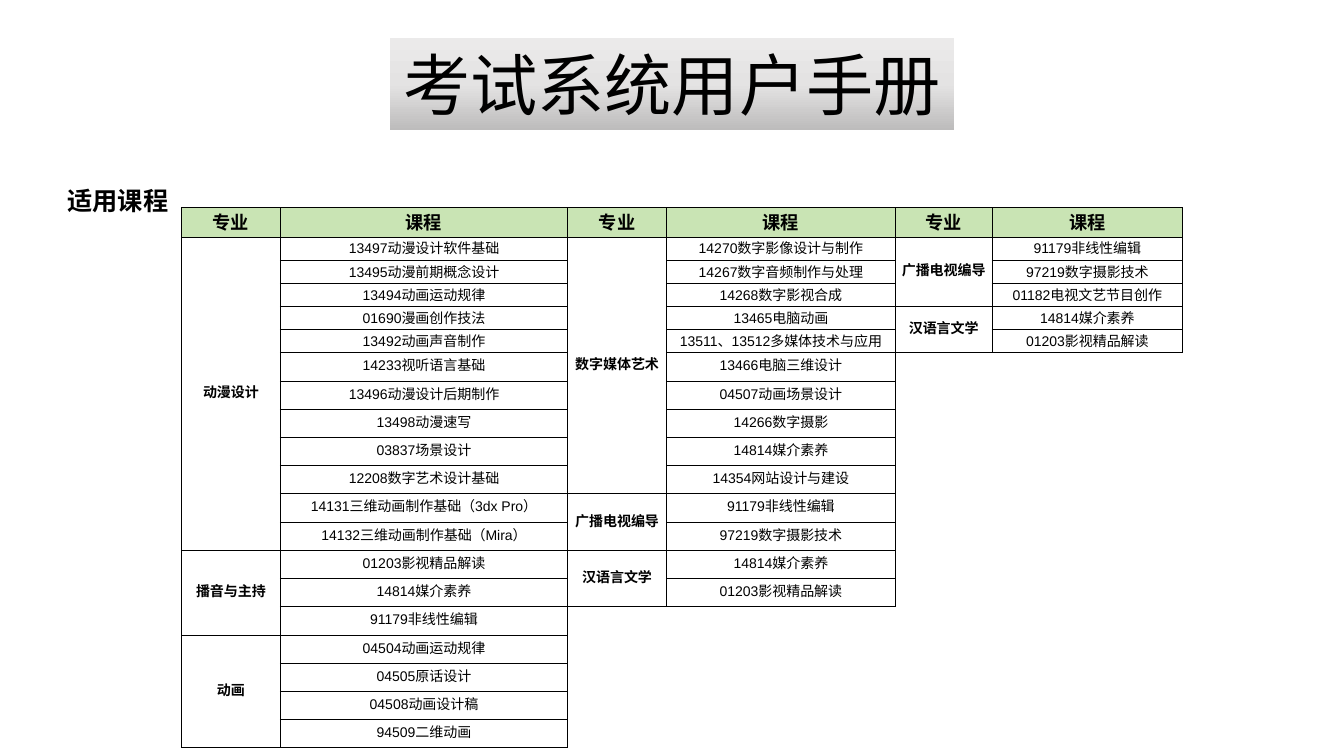
"""Build the exam system manual slide with its table of applicable courses."""
import copy

import pptx
import pptx.dml.color
import pptx.enum.text
import pptx.oxml.ns
import pptx.util
from lxml import etree

Inches, Pt = pptx.util.Inches, pptx.util.Pt
MIDDLE = pptx.enum.text.MSO_ANCHOR.MIDDLE
CENTER = pptx.enum.text.PP_ALIGN.CENTER
qn = pptx.oxml.ns.qn

TITLE = "考试系统用户手册"
LABEL = "适用课程"
HEADERS = ("专业", "课程")
BLOCKS = [
    [
        ("动漫设计", [
            "13497动漫设计软件基础", "13495动漫前期概念设计", "13494动画运动规律",
            "01690漫画创作技法", "13492动画声音制作", "14233视听语言基础",
            "13496动漫设计后期制作", "13498动漫速写", "03837场景设计",
            "12208数字艺术设计基础", "14131三维动画制作基础（3dx Pro）",
            "14132三维动画制作基础（Mira）"]),
        ("播音与主持", ["01203影视精品解读", "14814媒介素养", "91179非线性编辑"]),
        ("动画", ["04504动画运动规律", "04505原话设计", "04508动画设计稿",
                "94509二维动画"]),
    ],
    [
        ("数字媒体艺术", [
            "14270数字影像设计与制作", "14267数字音频制作与处理", "14268数字影视合成",
            "13465电脑动画", "13511、13512多媒体技术与应用", "13466电脑三维设计",
            "04507动画场景设计", "14266数字摄影", "14814媒介素养",
            "14354网站设计与建设"]),
        ("广播电视编导", ["91179非线性编辑", "97219数字摄影技术"]),
        ("汉语言文学", ["14814媒介素养", "01203影视精品解读"]),
    ],
    [
        ("广播电视编导", ["91179非线性编辑", "97219数字摄影技术",
                    "01182电视文艺节目创作"]),
        ("汉语言文学", ["14814媒介素养", "01203影视精品解读"]),
    ],
]
COL_WIDTHS = [0.98, 2.85, 0.98, 2.27, 0.96, 1.89]
ROW_HEIGHTS = [0.29] + [0.23] * 5 + [0.28] * 14
GRADIENT = [(0, "EBEAEA"), (0.5, "E4E3E3"), (1, "BDBCBC")]
HEADER_FILL, BLACK = "C9E4B4", "000000"
SIDES = {"lnL": (0, -1), "lnR": (0, 1), "lnT": (-1, 0), "lnB": (1, 0)}


def rgb(value):
    return pptx.dml.color.RGBColor.from_string(value)


def add_run(p, text, size, font, bold=False):
    r = p.add_run()
    r.text = text
    r.font.size, r.font.name, r.font.bold = Pt(size), font, bold
    r.font.color.rgb = rgb(BLACK)


def write_cell(cell, text, size, bold):
    p = cell.text_frame.paragraphs[0]
    p.alignment = CENTER
    add_run(p, text, size, "Arial", bold)


def set_borders(cell, drawn):
    tcPr = cell._tc.get_or_add_tcPr()
    for i, (side, visible) in enumerate(drawn.items()):
        ln = etree.Element(qn("a:" + side), w=str(Pt(0.5)))
        if visible:
            fill = etree.SubElement(ln, qn("a:solidFill"))
            etree.SubElement(fill, qn("a:srgbClr"), val=BLACK)
        else:
            etree.SubElement(ln, qn("a:noFill"))
        tcPr.insert(i, ln)


def add_title(s):
    sp = s.shapes.title
    sp.left, sp.top = Inches(3.87), Inches(0.38)
    sp.width, sp.height = Inches(5.59), Inches(0.91)
    sp.fill.gradient()
    sp.fill.gradient_angle = 270
    stops = sp._element.spPr.find(qn("a:gradFill")).find(qn("a:gsLst"))
    stops.append(copy.deepcopy(stops[-1]))
    for stop, (position, color) in zip(sp.fill.gradient_stops, GRADIENT):
        stop.position, stop.color.rgb = position, rgb(color)
    tf = sp.text_frame
    tf.word_wrap, tf.vertical_anchor = False, MIDDLE
    p = tf.paragraphs[0]
    p.alignment = CENTER
    add_run(p, TITLE, 48, "Calibri")


def add_label(s):
    box = s.shapes.add_textbox(Inches(0.57), Inches(1.79), Inches(2.92), Inches(0.4))
    box.text_frame.word_wrap = True
    add_run(box.text_frame.paragraphs[0], LABEL, 18, "Calibri", True)


def add_courses(s):
    rows, cols = len(ROW_HEIGHTS), len(COL_WIDTHS)
    table = s.shapes.add_table(rows, cols, Inches(1.8), Inches(2.06),
                               Inches(sum(COL_WIDTHS)),
                               Inches(sum(ROW_HEIGHTS))).table
    table.first_row = table.horz_banding = False
    for column, width in zip(table.columns, COL_WIDTHS):
        column.width = Inches(width)
    for row, height in zip(table.rows, ROW_HEIGHTS):
        row.height = Inches(height)

    lengths = [1 + sum(len(courses) for _, courses in block) for block in BLOCKS]

    def used(row, col):
        return 0 <= col < cols and 0 <= row < lengths[col // 2]

    for row in range(rows):
        for col in range(cols):
            cell = table.cell(row, col)
            cell.vertical_anchor = MIDDLE
            cell.margin_left = cell.margin_right = cell.margin_top = Inches(0.01)
            cell.margin_bottom = Inches(0.05)
            if row == 0:
                cell.fill.solid()
                cell.fill.fore_color.rgb = rgb(HEADER_FILL)
                write_cell(cell, HEADERS[col % 2], 13, True)
            else:
                cell.fill.background()
            if not used(row, col):
                p = cell.text_frame.paragraphs[0]
                etree.SubElement(p._p, qn("a:endParaRPr"), sz="1000")
            set_borders(cell, {side: used(row, col) or used(row + dr, col + dc)
                               for side, (dr, dc) in SIDES.items()})

    for b, block in enumerate(BLOCKS):
        row = 1
        for major, courses in block:
            last = row + len(courses) - 1
            table.cell(row, 2 * b).merge(table.cell(last, 2 * b))
            write_cell(table.cell(row, 2 * b), major, 10, True)
            for i, course in enumerate(courses):
                write_cell(table.cell(row + i, 2 * b + 1), course, 10, False)
            row = last + 1


def main():
    prs = pptx.Presentation()
    prs.slide_width, prs.slide_height = Inches(13.33), Inches(7.5)
    s = prs.slides.add_slide(prs.slide_layouts[5])
    add_label(s)
    add_title(s)
    add_courses(s)
    prs.save("out.pptx")


if __name__ == "__main__":
    main()
